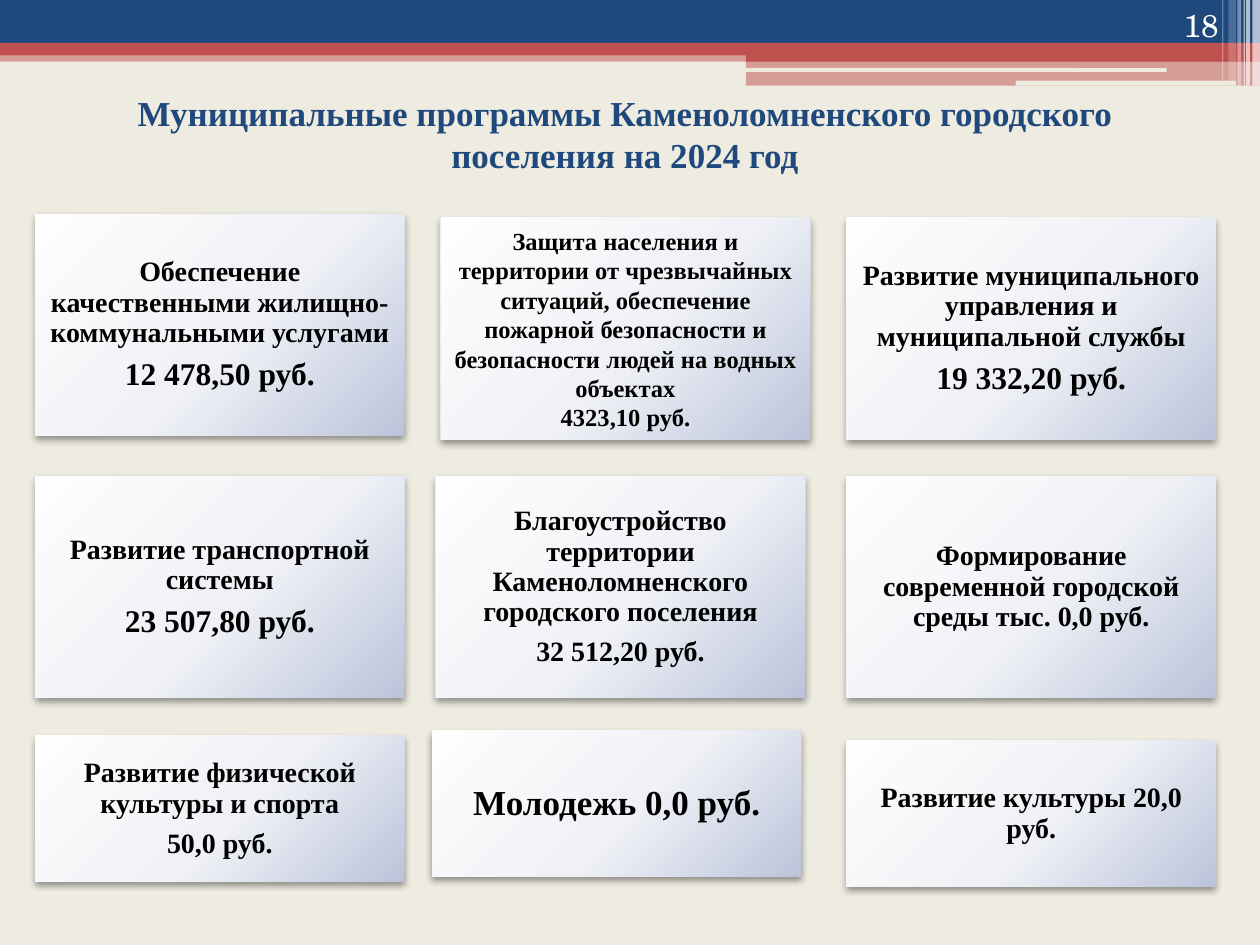
from pptx import Presentation
from pptx.util import Inches, Pt
from pptx.dml.color import RGBColor
from pptx.enum.shapes import MSO_SHAPE
from pptx.enum.text import PP_ALIGN, MSO_ANCHOR
from pptx.oxml import parse_xml
from pptx.oxml.ns import qn, nsdecls
from lxml import etree

NAVY = RGBColor(0x1F, 0x49, 0x7D)
RED = RGBColor(0xC0, 0x50, 0x4D)
CREAM = RGBColor(0xEE, 0xEC, 0xE1)
WHITE = RGBColor(0xFF, 0xFF, 0xFF)
BLACK = RGBColor(0, 0, 0)
SERIF = "Times New Roman"

GRADIENT = f"""<a:gradFill {nsdecls('a')} rotWithShape="1"><a:gsLst>
<a:gs pos="0"><a:srgbClr val="FEFEFE"/></a:gs>
<a:gs pos="55000"><a:srgbClr val="EFF1F6"/></a:gs>
<a:gs pos="100000"><a:srgbClr val="BCC4DB"/></a:gs></a:gsLst>
<a:path path="circle"><a:fillToRect l="-40000" t="-90000" r="140000" b="190000"/></a:path>
</a:gradFill>"""
SHADOW = f"""<a:outerShdw {nsdecls('a')} blurRad="52070" dist="25400" dir="5400000" rotWithShape="0">
<a:srgbClr val="000000"><a:alpha val="40000"/></a:srgbClr></a:outerShdw>"""

prs = Presentation()
prs.slide_width, prs.slide_height = Inches(10), Inches(7.5)
s = prs.slides.add_slide(prs.slide_layouts[6])
s.background.fill.solid()
s.background.fill.fore_color.rgb = CREAM


def add_box(kind, x, y, w, h):
    sp = s.shapes.add_shape(kind, Inches(x), Inches(y), Inches(w), Inches(h))
    sp.line.fill.background()
    sp.shadow.inherit = False
    return sp


def write(tf, lines, sizes, color, align=PP_ALIGN.CENTER, font=SERIF, bold=True):
    tf.word_wrap = True
    tf.text = "\n".join(lines)
    for p, size in zip(tf.paragraphs, sizes):
        p.alignment = align
        f = p.runs[0].font
        f.name, f.size, f.bold, f.color.rgb = font, Pt(size), bold, color


# Header bands and stripes: shape, left, top, width, height, colour, opacity %
RECT, ROUND = MSO_SHAPE.RECTANGLE, MSO_SHAPE.ROUNDED_RECTANGLE
for kind, x, y, w, h, color, opacity in [
    (RECT, 0, 0.4, 10, 0.09, RED, 50),
    (RECT, 0, 0, 10, 0.34, NAVY, 100),
    (RECT, 0, 0.34, 10, 0.1, RED, 100),
    (RECT, 5.92, 0.39, 4.08, 0.1, RED, 100),
    (RECT, 5.92, 0.48, 4.08, 0.2, RED, 50),
    (ROUND, 5.91, 0.54, 3.35, 0.03, CREAM, 100),
    (ROUND, 8.06, 0.64, 1.75, 0.04, CREAM, 100),
    (RECT, 9.94, 0, 0.06, 0.68, WHITE, 65),
    (RECT, 9.89, 0, 0.03, 0.68, WHITE, 65),
    (RECT, 9.87, 0, 0.01, 0.68, WHITE, 60),
    (RECT, 9.82, 0, 0.03, 0.68, WHITE, 40),
    (RECT, 9.75, 0, 0.06, 0.64, WHITE, 20),
    (RECT, 9.7, 0, 0.01, 0.64, WHITE, 30),
]:
    sp = add_box(kind, x, y, w, h)
    sp.fill.solid()
    sp.fill.fore_color.rgb = color
    if opacity < 100:
        clr = sp.fill._xPr.find(".//" + qn("a:srgbClr"))
        etree.SubElement(clr, qn("a:alpha")).set("val", str(opacity * 1000))

# Slide number
tf = s.shapes.add_textbox(Inches(8.94), Inches(0), Inches(0.83), Inches(0.4)).text_frame
tf.vertical_anchor = MSO_ANCHOR.BOTTOM
write(tf, ["18"], [18], WHITE, PP_ALIGN.RIGHT, "TeX Gyre Schola", False)

# Programme cards: left, top, height, inset, text lines, text sizes
for x, y, h, inset, lines, sizes in [
    (0.28, 1.7, 1.76, 0.07,
     ["Обеспечение качественными жилищно-коммунальными услугами", "12 478,50 руб."], [16, 18]),
    (3.5, 1.73, 1.76, 0.06,
     ["Защита населения и территории от чрезвычайных ситуаций, обеспечение пожарной "
      "безопасности и безопасности людей на водных объектах", "4323,10 руб."], [14, 14]),
    (6.72, 1.73, 1.76, 0.07,
     ["Развитие муниципального управления и муниципальной службы", "19 332,20 руб."], [16, 18]),
    (0.28, 3.78, 1.76, 0.07, ["Развитие транспортной системы", "23 507,80 руб."], [16, 18]),
    (3.46, 3.78, 1.76, 0.07,
     ["Благоустройство территории Каменоломненского городского поселения", "32 512,20 руб."],
     [16, 16]),
    (6.72, 3.78, 1.76, 0.07, ["Формирование современной городской среды тыс. 0,0 руб."], [16]),
    (0.28, 5.84, 1.16, 0.07, ["Развитие физической культуры и спорта", "50,0 руб."], [16, 16]),
    (3.43, 5.8, 1.16, 0.08, ["Молодежь 0,0 руб."], [20]),
    (6.72, 5.88, 1.16, 0.07, ["Развитие культуры 20,0 руб."], [16]),
]:
    sp = add_box(RECT, x, y, 2.93, h)
    spPr = sp._element.spPr
    spPr.find(qn("a:prstGeom")).addnext(parse_xml(GRADIENT))
    spPr.find(qn("a:effectLst")).append(parse_xml(SHADOW))
    tf = sp.text_frame
    tf.vertical_anchor = MSO_ANCHOR.MIDDLE
    tf.margin_left = tf.margin_right = tf.margin_top = tf.margin_bottom = Inches(inset)
    write(tf, lines, sizes, BLACK)
    if sizes[0] > 14:  # the longest text keeps plain single spacing
        for p, size in zip(tf.paragraphs, sizes):
            p.line_spacing = 0.9
            p.space_after = Pt(0.35 * size)

# Title
tf = s.shapes.add_textbox(Inches(0), Inches(0.68), Inches(9.92), Inches(0.77)).text_frame
write(tf, ["Муниципальные программы Каменоломненского городского", "поселения на 2024 год"],
      [20, 20], NAVY)

prs.save("out.pptx")
